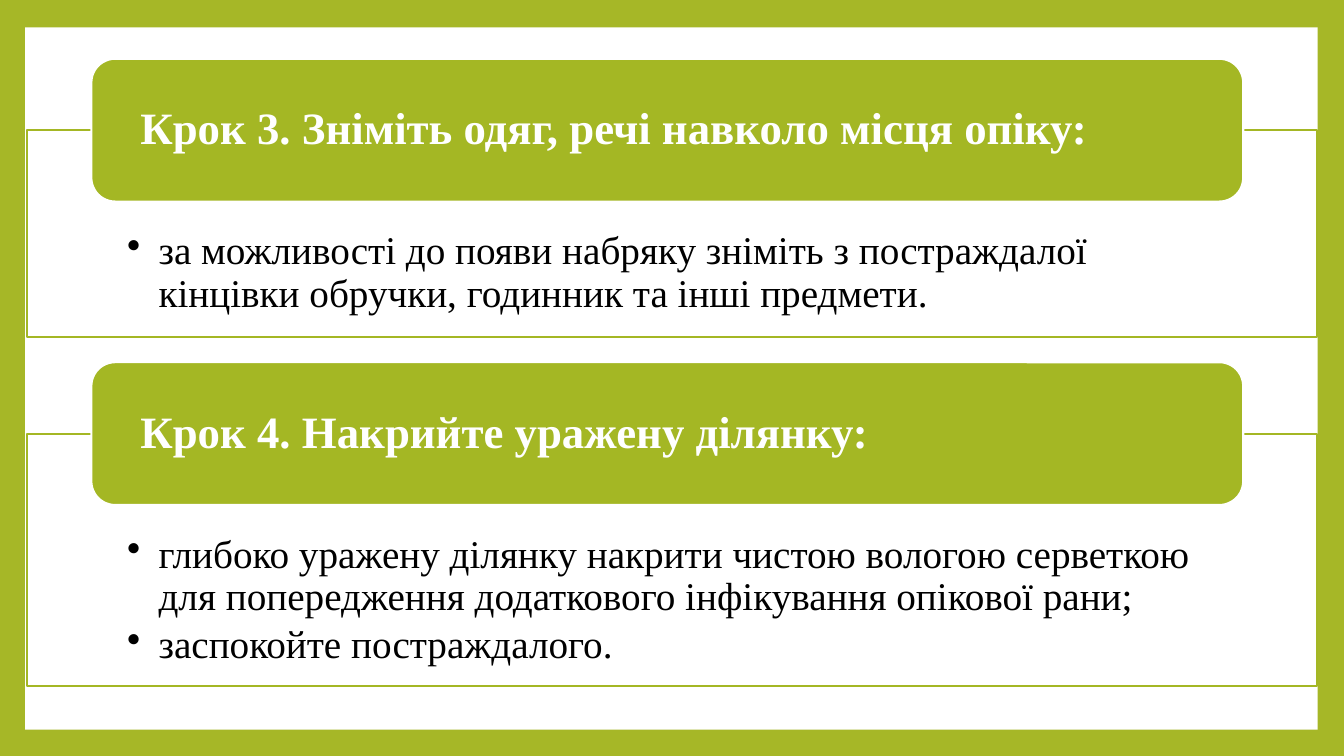
from lxml.etree import SubElement as Sub
from pptx import Presentation
from pptx.dml.color import RGBColor
from pptx.enum.shapes import MSO_SHAPE as Shape
from pptx.enum.text import MSO_ANCHOR as Anchor, PP_ALIGN as Align
from pptx.oxml.ns import qn
from pptx.util import Pt

PX = 9525
BACK = RGBColor(0xA6, 0xB7, 0x27)
GREEN = RGBColor(0xA4, 0xB7, 0x24)
WHITE = RGBColor(0xFF, 0xFF, 0xFF)
BLACK = RGBColor(0, 0, 0)
FONT = "Times New Roman"
INDENT = 30
STEP = 289

STEPS = [
    ("Крок 3. Зніміть одяг, речі навколо місця опіку:", 197,
     ["за можливості до появи набряку зніміть з постраждалої "
      "кінцівки обручки, годинник та інші предмети."]),
    ("Крок 4. Накрийте уражену ділянку:", 240,
     ["глибоко уражену ділянку накрити чистою вологою серветкою "
      "для попередження додаткового інфікування опікової рани;",
      "заспокойте постраждалого."]),
]


def add_box(slide, kind, box, fill, line=None):
    shape = slide.shapes.add_shape(kind, *(n * PX for n in box))
    shape.shadow.inherit = False
    shape.fill.solid()
    shape.fill.fore_color.rgb = fill
    if line is None:
        shape.line.fill.background()
    else:
        shape.line.color.rgb = line
        shape.line.width = Pt(1.5)
    return shape


def set_alpha(shape, percent):
    color = shape.fill._xPr.find(qn("a:solidFill"))[0]
    Sub(color, qn("a:alpha"), val=str(percent * 1000))


def add_bullet(para):
    props = para._p.get_or_add_pPr()
    props.set("marL", str(INDENT * PX))
    props.set("indent", str(-INDENT * PX))
    color = Sub(props, qn("a:buClr"))
    Sub(color, qn("a:srgbClr"), val=str(BLACK))
    Sub(props, qn("a:buChar"), char="•")


def write(shape, lines, *, size, color, inset, bold=False,
          anchor=Anchor.TOP, bullet=False, gap=0):
    """Fill a shape with paragraphs; inset is left, top, right, bottom."""
    frame = shape.text_frame
    frame.word_wrap = True
    frame.vertical_anchor = anchor
    (frame.margin_left, frame.margin_top,
     frame.margin_right, frame.margin_bottom) = (n * PX for n in inset)
    for i, line in enumerate(lines):
        para = frame.add_paragraph() if i else frame.paragraphs[0]
        para.alignment = Align.LEFT
        para.line_spacing = 0.9
        para.space_before = Pt(gap if i else 0)
        if bullet:
            add_bullet(para)
        run = para.add_run()
        run.text = line
        font = run.font
        font.name, font.size, font.bold = FONT, Pt(size), bold
        font.color.rgb = color


def add_step(slide, top, title, height, points):
    frame = add_box(slide, Shape.RECTANGLE, (26, top + 68, 1228, height),
                    WHITE, GREEN)
    set_alpha(frame, 89)
    write(frame, points, size=28, color=BLACK, inset=(95, 96, 95, 21),
          bullet=True, gap=4.2)
    head = add_box(slide, Shape.ROUNDED_RECTANGLE, (87, top, 1097, 136),
                   GREEN, WHITE)
    write(head, [title], size=32, color=WHITE, inset=(40, 0, 40, 0),
          bold=True, anchor=Anchor.MIDDLE)


def main():
    deck = Presentation()
    deck.slide_width, deck.slide_height = 1280 * PX, 720 * PX
    slide = deck.slides.add_slide(deck.slide_layouts[6])
    back = slide.background.fill
    back.solid()
    back.fore_color.rgb = BACK
    add_box(slide, Shape.RECTANGLE, (24, 26, 1231, 669), WHITE)
    for i, step in enumerate(STEPS):
        add_step(slide, 56 + i * STEP, *step)
    deck.save("out.pptx")


if __name__ == "__main__":
    main()
